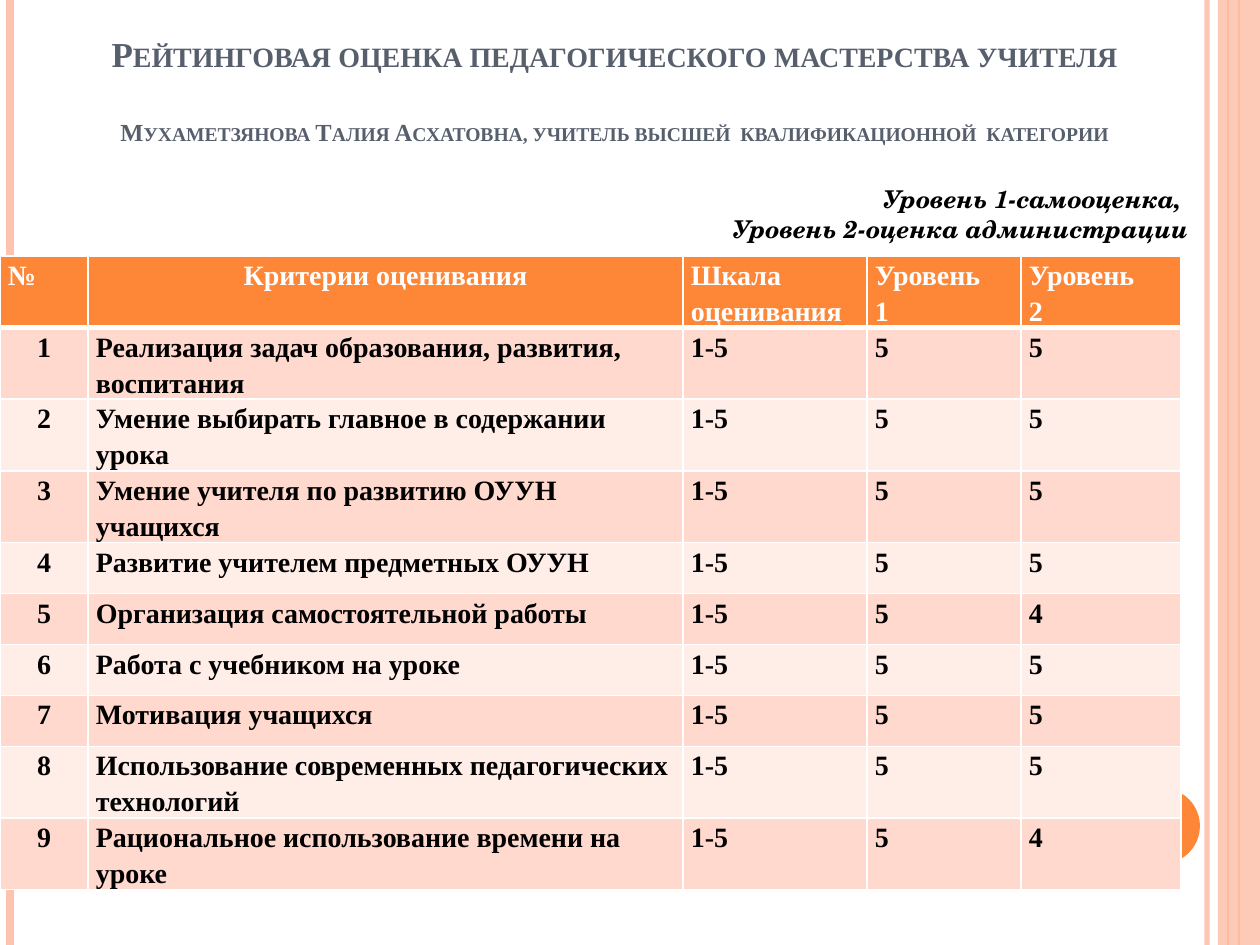
"""Build a slide with a teacher rating table."""
from lxml import etree
from pptx import Presentation
from pptx.dml.color import RGBColor
from pptx.enum.shapes import MSO_CONNECTOR, MSO_SHAPE
from pptx.enum.text import MSO_ANCHOR, MSO_AUTO_SIZE, PP_ALIGN
from pptx.oxml.ns import qn
from pptx.util import Pt

LINE, RECT, OVAL = MSO_CONNECTOR.STRAIGHT, MSO_SHAPE.RECTANGLE, MSO_SHAPE.OVAL
LEFT, MID, RIGHT = PP_ALIGN.LEFT, PP_ALIGN.CENTER, PP_ALIGN.RIGHT
BOTTOM, TOP, FIXED = MSO_ANCHOR.BOTTOM, MSO_ANCHOR.TOP, MSO_AUTO_SIZE.NONE
PX = 914400 // 126
SERIF = "Times New Roman"
HUES = {"head": "FE8637", "pale": "FEC3AE", "odd": "FFD9CE", "even": "FFEDE8",
        "slate": "575F6D", "white": "FFFFFF", "black": "000000"}


def style(par, hue, align, **font):
    par.alignment = align
    for run in par.runs:
        run.font.color.rgb = RGBColor.from_string(HUES[hue])
        for key, value in font.items():
            setattr(run.font, key, value)


def fade(node, share):
    tint = next(node.iter(qn("a:srgbClr")))
    etree.SubElement(tint, qn("a:alpha"), val=str(share * 1000))


deck = Presentation()
deck.slide_width, deck.slide_height = 1260 * PX, 945 * PX
slide = deck.slides.add_slide(deck.slide_layouts[5])
shapes = slide.shapes

for x, hue, width, share in [(1207, "pale", 3, 93), (10, "pale", 4.5, 100),
                             (1239, "head", 1.5, 100), (1228, "head", 0.75, 100)]:
    bar = shapes.add_connector(LINE, x * PX, 0, x * PX, 945 * PX)
    bar.line.width = Pt(width)
    bar.line.color.rgb = RGBColor.from_string(HUES[hue])
    props = bar.element.spPr
    etree.SubElement(props, qn("a:effectLst"))
    if share < 100:
        fade(props, share)

for kind, hue, share, box in [(RECT, "pale", 87, (1218, 0, 42, 945)),
                              (OVAL, "head", 100, (1124, 788, 76, 76))]:
    shape = shapes.add_shape(kind, *[n * PX for n in box])
    shape.shadow.inherit = False
    shape.fill.solid()
    shape.fill.fore_color.rgb = RGBColor.from_string(HUES[hue])
    shape.line.fill.background()
    if share < 100:
        fade(shape.element.spPr, share)

title = shapes.title
title.left, title.top, title.width, title.height = 28 * PX, 54 * PX, 1173 * PX, 129 * PX
frame = title.text_frame
frame.text = ("Рейтинговая оценка педагогического мастерства учителя\n"
              "Мухаметзянова Талия Асхатовна, учитель высшей  квалификационной  категории")
for key, value in {"auto_size": FIXED, "vertical_anchor": BOTTOM, "word_wrap": True,
                   "margin_bottom": 37 * PX}.items():
    setattr(frame, key, value)
for par, size, gap in zip(frame.paragraphs, (20, 14), (0, 24)):
    par.space_before = Pt(gap)
    style(par, "slate", MID, name=SERIF, size=Pt(size), bold=True)
    for run in par.runs:
        run.font._element.set("cap", "small")

heads = ["№", "Критерии оценивания", "Шкала оценивания", "Уровень\n1", "Уровень\n2"]
marks = [("Реализация задач образования, развития, воспитания", 5, 5),
         ("Умение выбирать главное в содержании урока", 5, 5),
         ("Умение учителя по развитию ОУУН учащихся", 5, 5),
         ("Развитие учителем предметных ОУУН", 5, 5),
         ("Организация самостоятельной работы", 5, 4),
         ("Работа с учебником на уроке", 5, 5),
         ("Мотивация учащихся", 5, 5),
         ("Использование современных педагогических технологий", 5, 5),
         ("Рациональное использование времени на уроке", 5, 4)]
rows = [heads] + [[i, text, "1-5", own, staff]
                  for i, (text, own, staff) in enumerate(marks, 1)]
tall, short = 71, 51
widths = [88, 595, 184, 154, 160]
highs = [short if 4 <= r <= 7 else tall for r in range(len(rows))]
table = shapes.add_table(len(rows), len(widths), 0, 256 * PX,
                         sum(widths) * PX, sum(highs) * PX).table
for col, width in zip(table.columns, widths):
    col.width = width * PX
for r, row in enumerate(rows):
    table.rows[r].height = highs[r] * PX
    for c, text in enumerate(row):
        cell = table.cell(r, c)
        cell.text = str(text)
        for key, value in {"margin_left": 8 * PX, "margin_right": 8 * PX, "margin_top": 0,
                           "margin_bottom": 0, "vertical_anchor": TOP}.items():
            setattr(cell, key, value)
        cell.fill.solid()
        fill = "head" if r == 0 else "odd" if r % 2 else "even"
        cell.fill.fore_color.rgb = RGBColor.from_string(HUES[fill])
        for par in cell.text_frame.paragraphs:
            par.line_spacing = 1.15
            style(par, "black" if r else "white", MID if c == (r == 0) else LEFT,
                  name=SERIF, size=Pt(16), bold=True)
        props = cell._tc.get_or_add_tcPr()
        for i, side in enumerate("LRTB"):
            thick = (r, side) in [(0, "B"), (1, "T")]
            edge = etree.Element(qn("a:ln" + side), w=str(Pt(3 if thick else 1)))
            paint = etree.SubElement(edge, qn("a:solidFill"))
            etree.SubElement(paint, qn("a:srgbClr"), val=HUES["white"])
            props.insert(i, edge)

note = shapes.add_textbox(571 * PX, 178 * PX, 630 * PX, 72 * PX).text_frame
note.word_wrap = True
note.text = "Уровень 1-самооценка, \nУровень 2-оценка администрации"
for par in note.paragraphs:
    style(par, "black", RIGHT, name="TeX Gyre Schola", size=Pt(14), bold=True, italic=True)

deck.save("out.pptx")
